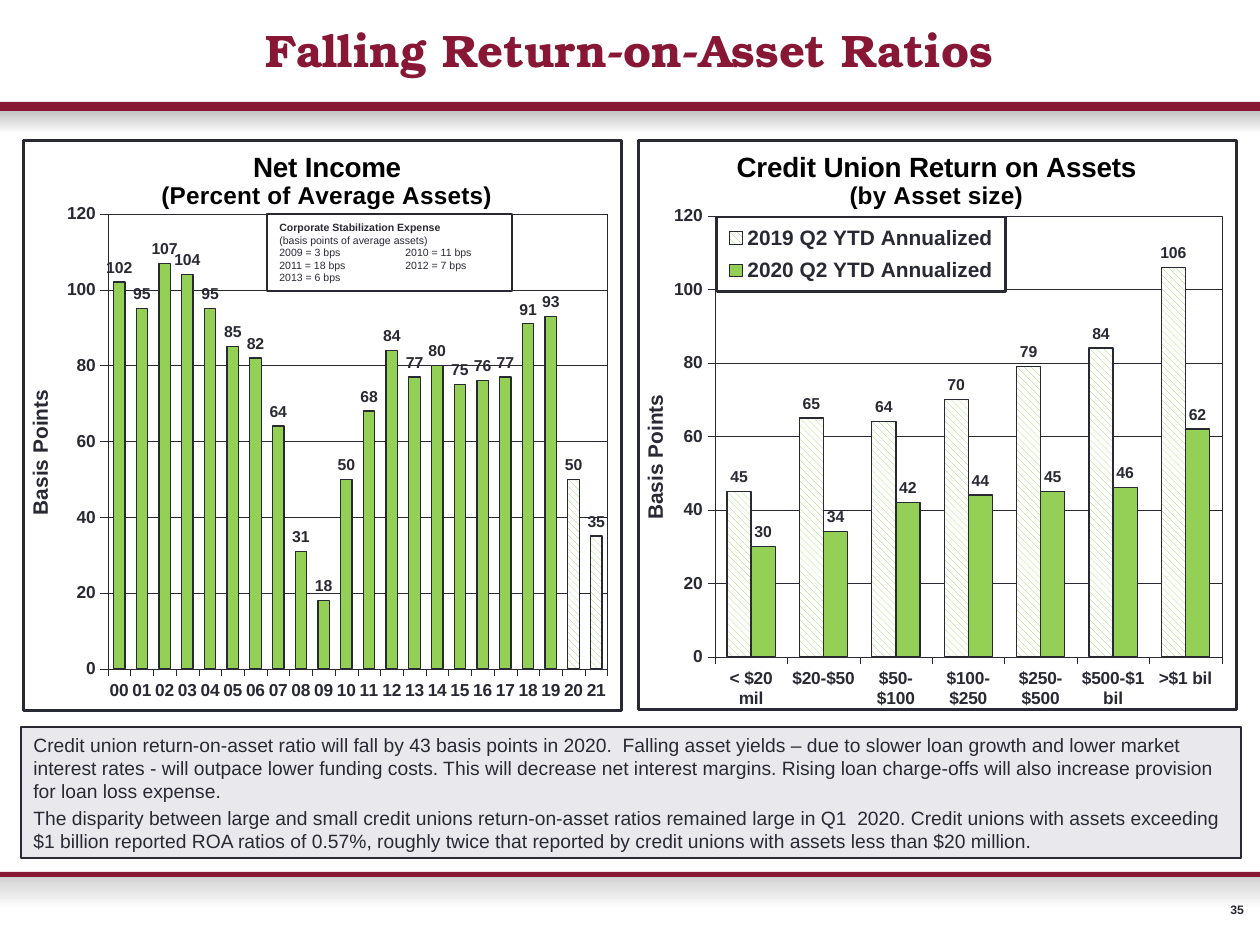
from lxml import etree
from pptx import Presentation
from pptx.chart.data import CategoryChartData
from pptx.dml.color import RGBColor
from pptx.enum.chart import XL_CHART_TYPE, XL_LABEL_POSITION, XL_LEGEND_POSITION, XL_TICK_MARK
from pptx.enum.dml import MSO_PATTERN
from pptx.enum.shapes import MSO_SHAPE
from pptx.enum.text import MSO_ANCHOR, PP_ALIGN
from pptx.oxml import parse_xml
from pptx.oxml.ns import nsdecls, qn
from pptx.util import Pt

COLUMNS = XL_CHART_TYPE.COLUMN_CLUSTERED
OUTSIDE_END = XL_LABEL_POSITION.OUTSIDE_END
LEGEND_RIGHT = XL_LEGEND_POSITION.RIGHT
TICK_OUT = XL_TICK_MARK.OUTSIDE
DIAGONAL = MSO_PATTERN.WIDE_DOWNWARD_DIAGONAL
RECTANGLE = MSO_SHAPE.RECTANGLE
TOP, MIDDLE = MSO_ANCHOR.TOP, MSO_ANCHOR.MIDDLE
LEFT, CENTER, RIGHT = PP_ALIGN.LEFT, PP_ALIGN.CENTER, PP_ALIGN.RIGHT

CRIMSON = RGBColor(0x88, 0x16, 0x35)
INK = RGBColor(0x29, 0x29, 0x34)
GREEN = RGBColor(0x93, 0xD0, 0x55)
PALE = RGBColor(0xE8, 0xE8, 0xED)
SILVER = RGBColor(0xC0, 0xC0, 0xC0)
MIST = RGBColor(0xCF, 0xCF, 0xCF)
BLACK = RGBColor(0, 0, 0)
WHITE = RGBColor(0xFF, 0xFF, 0xFF)

EMU_PER_INCH = 914400
PX_PER_INCH = 126


def emu(*lengths):
    return [round(length * EMU_PER_INCH / PX_PER_INCH) for length in lengths]


def style_font(font, size, color=INK, bold=False, name="Arial"):
    font.size, font.bold, font.name = Pt(size), bold, name
    font.color.rgb = color


def write(frame, text, *, size, color=INK, bold=False, name="Arial",
          align=LEFT, before=0, first=False):
    para = frame.paragraphs[0] if first else frame.add_paragraph()
    para.alignment = align
    if before and not first:
        para.space_before = Pt(before)
    span = para.add_run()
    span.text = text
    style_font(span.font, size, color, bold, name)


def style_line(line, width):
    line.color.rgb = INK
    line.width = Pt(width)


def fill_bars(element_format, hatched):
    fill = element_format.fill
    if hatched:
        fill.patterned()
        fill.pattern = DIAGONAL
        fill.fore_color.rgb = GREEN
        fill.back_color.rgb = WHITE
    else:
        fill.solid()
        fill.fore_color.rgb = GREEN
    style_line(element_format.line, 0.73)


def frame_properties(width):
    return parse_xml(
        f'<c:spPr {nsdecls("c", "a")}><a:solidFill><a:srgbClr val="{WHITE}"/></a:solidFill>'
        f'<a:ln w="{Pt(width)}"><a:solidFill><a:srgbClr val="{INK}"/></a:solidFill></a:ln></c:spPr>')


def place(node, index, area, chart_area, inner=False):
    layout = node.find(qn("c:layout"))
    if layout is None:
        layout = etree.SubElement(node, qn("c:layout"))
        node.insert(index, layout)
    manual = etree.SubElement(layout, qn("c:manualLayout"))
    settings = [("layoutTarget", "inner")] if inner else []
    settings += [("xMode", "edge"), ("yMode", "edge")]
    left, top, width, height = chart_area
    offsets = (area[0] - left, area[1] - top, *area[2:])
    settings += [(key, str(offset / whole)) for key, offset, whole
                 in zip("xywh", offsets, (width, height, width, height))]
    for key, value in settings:
        etree.SubElement(manual, qn(f"c:{key}")).set("val", value)


class SlideBuilder:
    def __init__(self, page):
        self.page = page

    def rectangle(self, area, fill, line=0, fade=False, anchor=TOP):
        box = self.page.shapes.add_shape(RECTANGLE, *emu(*area))
        box.shadow.inherit = False
        if fade:
            box.fill.gradient()
            box.fill.gradient_angle = 270
            for stop, color in zip(box.fill.gradient_stops, (fill, WHITE)):
                stop.color.rgb = color
        else:
            box.fill.solid()
            box.fill.fore_color.rgb = fill
        if line:
            style_line(box.line, line)
        else:
            box.line.fill.background()
        box.text_frame.word_wrap = True
        box.text_frame.vertical_anchor = anchor
        return box.text_frame

    def label(self, area, text, wrap=True, inset=True, **style):
        frame = self.page.shapes.add_textbox(*emu(*area)).text_frame
        frame.word_wrap = wrap
        frame.vertical_anchor = MIDDLE
        if not inset:
            frame.margin_left = frame.margin_right = frame.margin_top = frame.margin_bottom = 0
        write(frame, text, first=True, **style)

    def column_chart(self, area, plot_area, title_at, title, categories, series,
                     hatched_series=(), hatched_points=(), legend_area=None):
        chart_data = CategoryChartData(number_format="#,##0")
        chart_data.categories = categories
        for name, values in series:
            chart_data.add_series(name, values)
        chart = self.page.shapes.add_chart(COLUMNS, *emu(*area), chart_data).chart
        style_font(chart.font, 7.5, bold=True)
        root = chart.element.find(qn("c:chart"))
        root.addnext(frame_properties(1.5))

        chart.has_title = True
        for row, (text, size) in enumerate(zip(title, (16, 14))):
            write(chart.chart_title.text_frame, text, size=size, color=BLACK,
                  bold=True, align=CENTER, first=row == 0)
        place(root.find(qn("c:title")), 1, title_at, area)

        for axis in (chart.category_axis, chart.value_axis):
            axis.major_tick_mark = TICK_OUT
            style_line(axis.format.line, 0.18)
            style_font(axis.tick_labels.font, 10, bold=True)
        axis = chart.value_axis
        axis.minimum_scale, axis.maximum_scale, axis.major_unit = 0, 120, 20
        style_line(axis.major_gridlines.format.line, 0.18)
        write(axis.axis_title.text_frame, "Basis Points", size=12, bold=True, first=True)

        plot = chart.plots[0]
        plot.gap_width, plot.overlap = 100, 0
        plot.vary_by_categories = False
        for index, bars in enumerate(plot.series):
            fill_bars(bars.format, index in hatched_series)
            labels = bars.data_labels
            labels.show_value = True
            labels.position = OUTSIDE_END
            labels.number_format = "#,##0"
            labels.number_format_is_linked = False
            style_font(labels.font, 9, bold=True)
        for index in hatched_points:
            fill_bars(plot.series[0].points[index].format, True)
        plot_node = root.find(qn("c:plotArea"))
        place(plot_node, 0, plot_area, area, inner=True)
        plot_node.append(frame_properties(0.18))

        chart.has_legend = legend_area is not None
        if legend_area:
            chart.legend.position = LEGEND_RIGHT
            chart.legend.include_in_layout = False
            style_font(chart.legend.font, 12, bold=True)
            legend = root.find(qn("c:legend"))
            place(legend, 1, legend_area, area)
            legend.find(qn("c:overlay")).addnext(frame_properties(1.5))


def main():
    deck = Presentation()
    deck.slide_width, deck.slide_height = emu(1260, 945)
    builder = SlideBuilder(deck.slides.add_slide(deck.slide_layouts[6]))

    builder.rectangle((0, 875, 1260, 34), MIST, fade=True)
    builder.rectangle((0, 110, 1260, 24), SILVER, fade=True)
    builder.label((1229, 902, 15, 15), "35", wrap=False, inset=False,
                  size=7, bold=True, align=RIGHT)
    builder.rectangle((0, 872, 1260, 5), CRIMSON)
    builder.rectangle((0, 102, 1260, 9), CRIMSON)
    builder.label((21, 15, 1218, 68), "Falling Return-on-Asset Ratios", size=26,
                  color=CRIMSON, bold=True, name="TeX Gyre Bonum", align=CENTER)

    commentary = builder.rectangle((21, 727, 1220, 131), PALE, line=1.5)
    for row, text in enumerate((
        "Credit union return-on-asset ratio will fall by 43 basis points in 2020.  Falling asset "
        "yields – due to slower loan growth and lower market interest rates - will outpace lower "
        "funding costs. This will decrease net interest margins. Rising loan charge-offs will "
        "also increase provision for loan loss expense.",
        "The disparity between large and small credit unions return-on-asset ratios remained "
        "large in Q1  2020. Credit unions with assets exceeding $1 billion reported ROA ratios "
        "of 0.57%, roughly twice that reported by credit unions with assets less than $20 million.",
    )):
        write(commentary, text, size=11, before=2.2, first=row == 0)

    net_income = (102, 95, 107, 104, 95, 85, 82, 64, 31, 18, 50,
                  68, 84, 77, 80, 75, 76, 77, 91, 93, 50, 35)
    builder.column_chart(
        (22, 139, 601, 573), (107, 213, 502, 457), (157, 145),
        ("Net Income", "(Percent of Average Assets)"),
        [f"{year:02d}" for year in range(22)],
        [("Series 1", net_income)], hatched_points=(20, 21))
    builder.column_chart(
        (637, 139, 601, 572), (714, 215, 509, 443), (732, 145),
        ("Credit Union Return on Assets", "(by Asset size)"),
        ("< $20 mil", "$20-$50", "$50-$100", "$100-$250", "$250-$500", "$500-$1 bil", ">$1 bil"),
        [("2019 Q2 YTD Annualized", (45, 65, 64, 70, 79, 84, 106)),
         ("2020 Q2 YTD Annualized", (30, 34, 42, 44, 45, 46, 62))],
        hatched_series=(0,), legend_area=(716, 216, 290, 75))

    expense = builder.rectangle((267, 214, 245, 77), WHITE, line=0.75, anchor=MIDDLE)
    for row, text in enumerate((
        "Corporate Stabilization Expense", "(basis points of average assets)",
        "2009 = 3 bps \t2010 = 11 bps", "2011 = 18 bps \t2012 = 7 bps", "2013 = 6 bps",
    )):
        write(expense, text, size=6, bold=row == 0, first=row == 0)

    deck.save("out.pptx")


if __name__ == "__main__":
    main()
